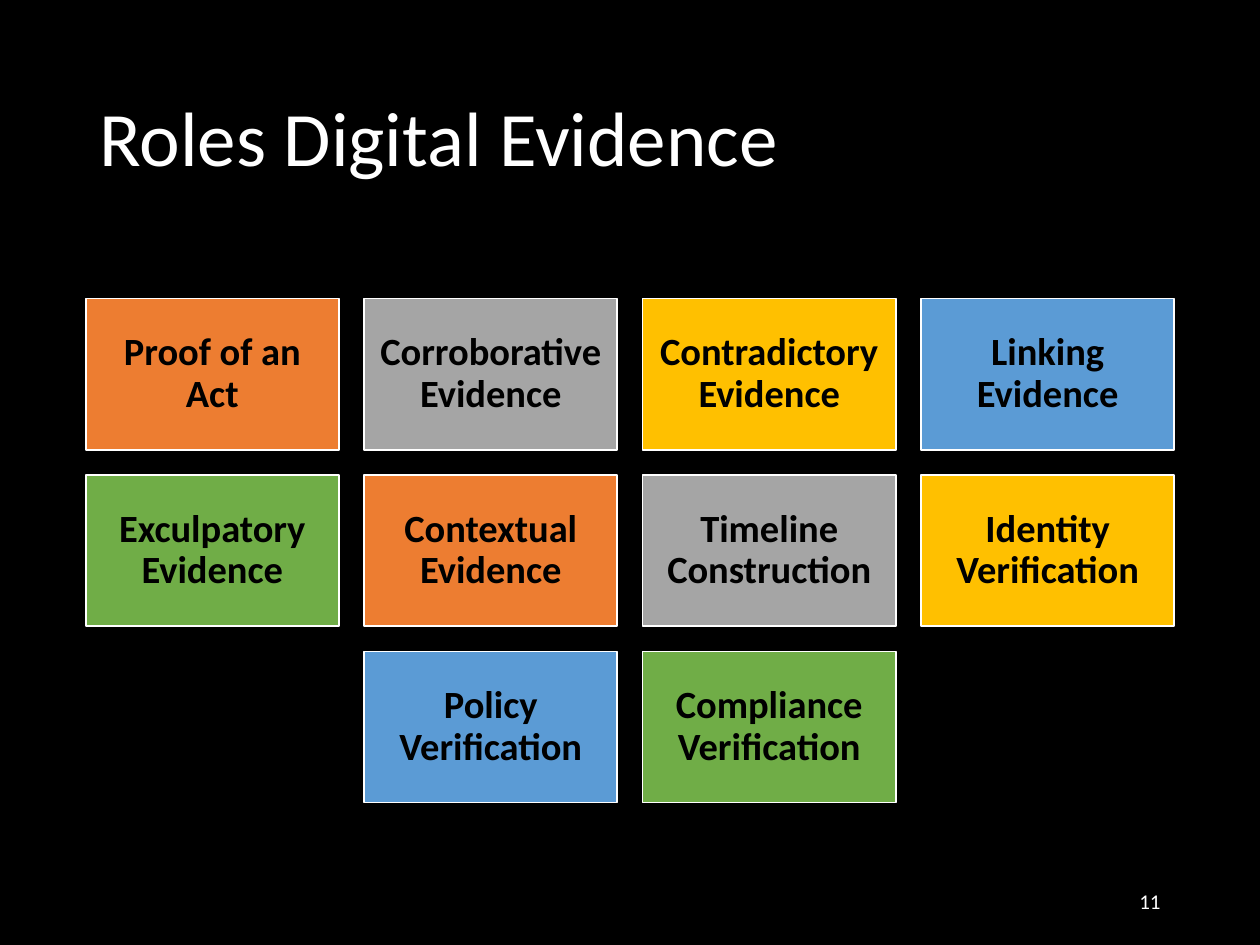
import pptx
import pptx.util
import pptx.dml.color
import pptx.enum.shapes
import pptx.enum.text

Inches, Pt = pptx.util.Inches, pptx.util.Pt
ALIGN = pptx.enum.text.PP_ALIGN
MIDDLE = pptx.enum.text.MSO_ANCHOR.MIDDLE


def color(code):
    return pptx.dml.color.RGBColor.from_string(code)


def write(frame, text, size, code, align, bold=False):
    frame.word_wrap = True
    frame.auto_size = pptx.enum.text.MSO_AUTO_SIZE.NONE
    frame.vertical_anchor = MIDDLE
    para = frame.paragraphs[0]
    para.text = text
    para.alignment = align
    para.font.name = "Calibri"
    para.font.size = Pt(size)
    para.font.bold = bold
    para.font.color.rgb = color(code)
    return para


deck = pptx.Presentation()
deck.slide_width, deck.slide_height = Inches(10), Inches(7.5)
slide = deck.slides.add_slide(deck.slide_layouts[5])
slide.background.fill.solid()
slide.background.fill.fore_color.rgb = color("000000")

# Title
title = slide.shapes.title
title.left, title.top = Inches(0.69), Inches(0.4)
title.width, title.height = Inches(8.62), Inches(1.45)
para = write(title.text_frame, "Roles Digital Evidence", 44, "FFFFFF", ALIGN.LEFT)
para.line_spacing = 0.9

# Grid of roles, each row centred, colours in rotation
rows = [
    ["Proof of an Act", "Corroborative Evidence",
     "Contradictory Evidence", "Linking Evidence"],
    ["Exculpatory Evidence", "Contextual Evidence",
     "Timeline Construction", "Identity Verification"],
    ["Policy Verification", "Compliance Verification"],
]
fills = ["ED7D31", "A5A5A5", "FFC000", "5B9BD5", "70AD47"]
wide, high, gap = 2.01, 1.2, 0.2
group = slide.shapes.add_group_shape()
count = 0
for row, roles in enumerate(rows):
    span = len(roles) * (wide + gap) - gap
    left = (10 - span) / 2
    top = 2.37 + row * (high + gap)
    for col, role in enumerate(roles):
        box = group.shapes.add_shape(
            pptx.enum.shapes.MSO_SHAPE.RECTANGLE,
            Inches(left + col * (wide + gap)), Inches(top),
            Inches(wide), Inches(high))
        box.shadow.inherit = False
        box.fill.solid()
        box.fill.fore_color.rgb = color(fills[count % len(fills)])
        box.line.color.rgb = color("FFFFFF")
        box.line.width = Pt(1)
        frame = box.text_frame
        frame.margin_left = frame.margin_right = Inches(0.09)
        frame.margin_top = frame.margin_bottom = Inches(0.09)
        para = write(frame, role, 22, "000000", ALIGN.CENTER, True)
        para.line_spacing = 0.9
        count += 1

# Page number
page = slide.shapes.add_textbox(
    Inches(7.06), Inches(6.95), Inches(2.25), Inches(0.4))
write(page.text_frame, "11", 12, "FFFFFF", ALIGN.RIGHT)

deck.save("out.pptx")
